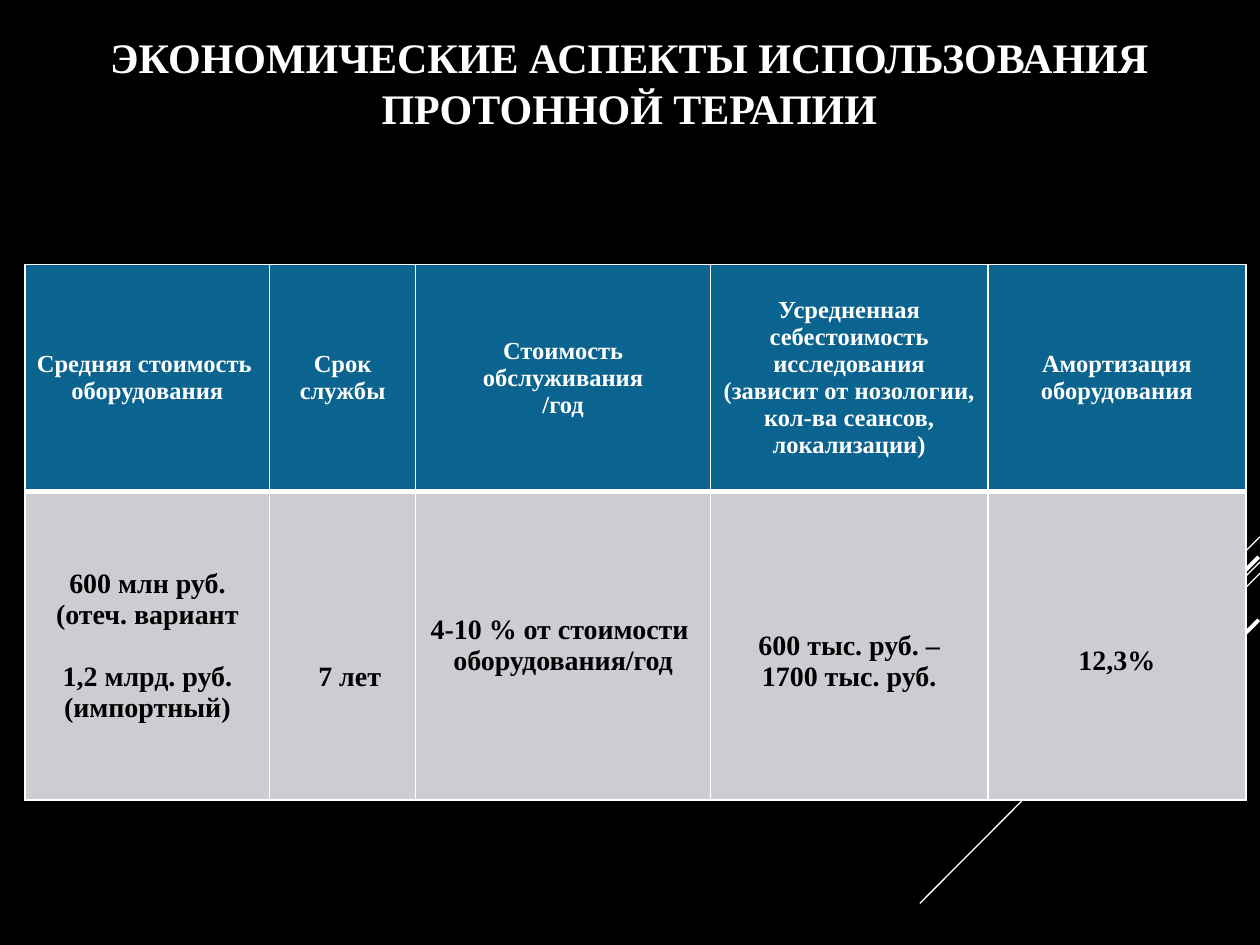
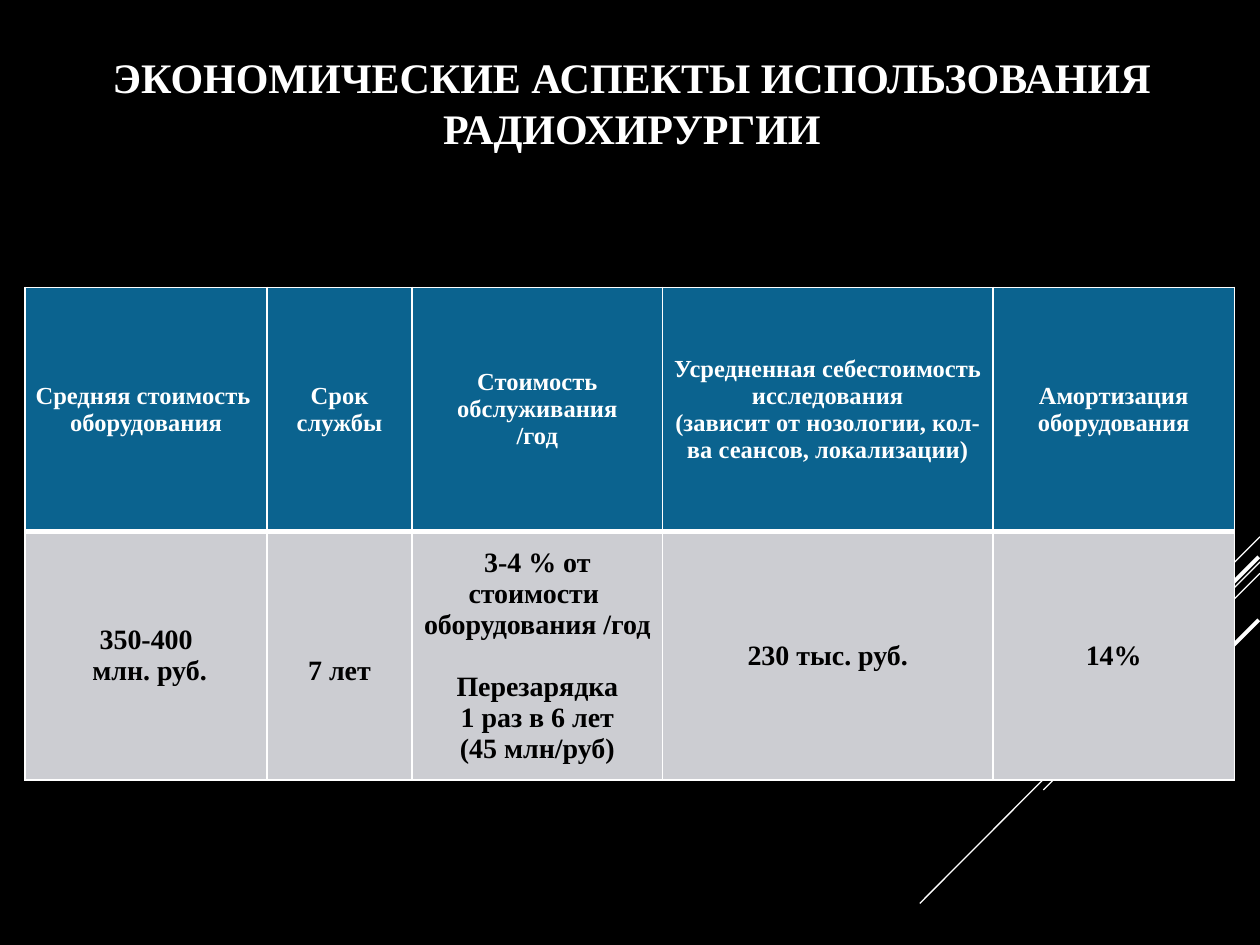
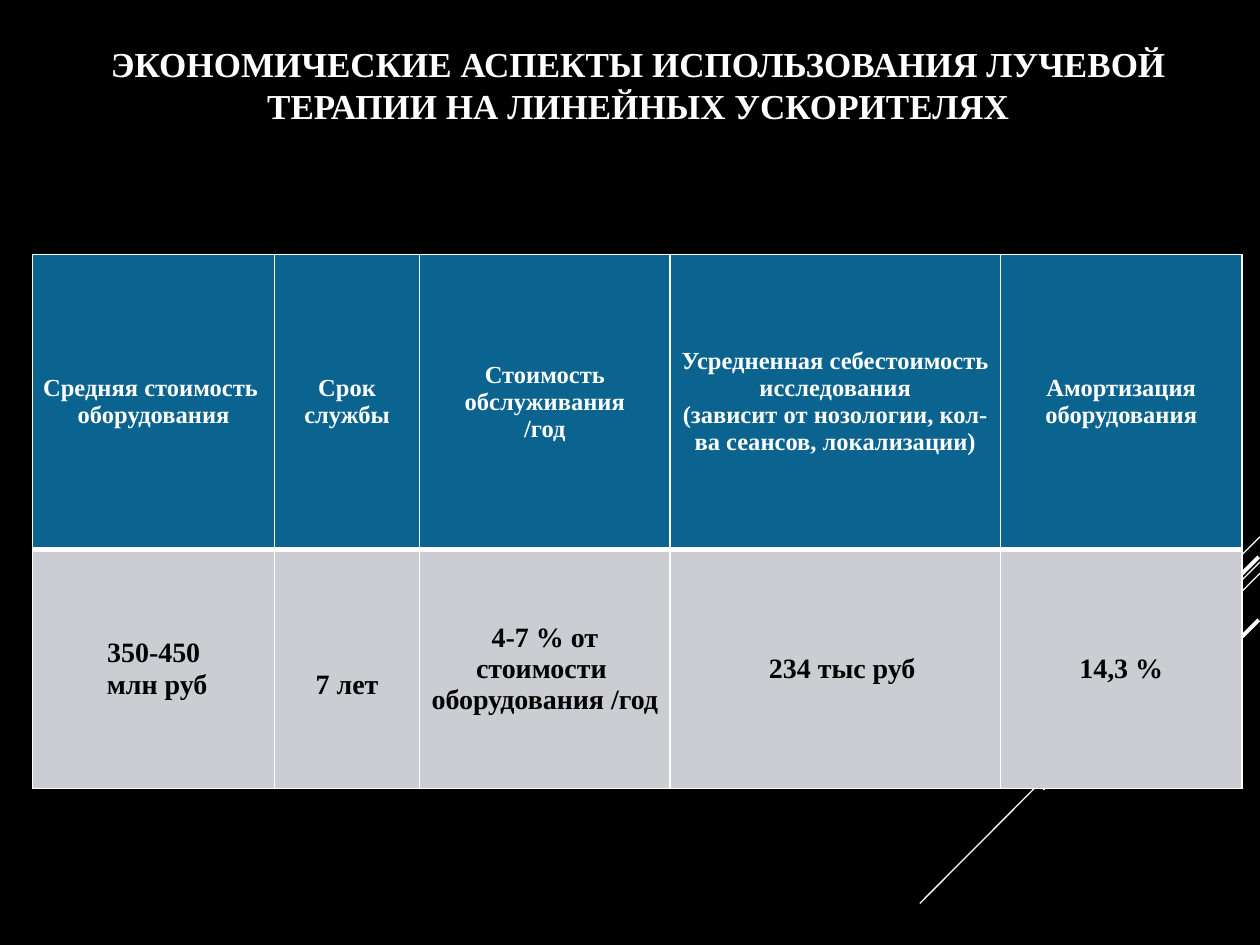
from lxml.etree import SubElement
from pptx import Presentation
from pptx.dml.color import RGBColor
from pptx.enum.shapes import MSO_CONNECTOR as CONN
from pptx.enum.text import MSO_ANCHOR as ANCHOR, PP_ALIGN as ALIGN
from pptx.oxml.ns import qn
from pptx.util import Inches, Pt

BLACK = RGBColor(0x00, 0x00, 0x00)
WHITE = RGBColor(0xFF, 0xFF, 0xFF)
BLUE = RGBColor(0x0B, 0x63, 0x8F)
GREY = RGBColor(0xCC, 0xCD, 0xD2)
FONT = "Times New Roman"
BLANK_LINE = 17.7
INDENT = 0.11

RAYS = [
    (10, 4.26, 9.17, 5.09, 0.75),
    (10, 4.46, 7.3, 7.17, 0.75),
    (10, 4.55, 8.28, 6.27, 0.75),
    (9.99, 4.42, 8.42, 5.99, 2.25),
    (9.99, 4.92, 8.85, 6.06, 2.25),
]
HEADERS = [
    ["Средняя стоимость ", "оборудования"],
    ["Срок службы"],
    ["Стоимость обслуживания", "/год"],
    ["Усредненная себестоимость исследования",
     "(зависит от нозологии, кол-ва сеансов, локализации)"],
    ["Амортизация оборудования"],
]
COMMON_COLS = [1.92, 1.15, 1.99, 2.62, 1.92]

SLIDES = [
    dict(
        title=["ЭКОНОМИЧЕСКИЕ АСПЕКТЫ ИСПОЛЬЗОВАНИЯ ПРОТОННОЙ ТЕРАПИИ"],
        title_box=(0.15, 0.2, 9.69, 0.91), size=24,
        table_at=(0.2, 2.1), cols=[1.94, 1.16, 2.34, 2.2, 2.05], rows=[1.8, 2.45],
        values=[
            dict(lines=["600 млн руб.", "(отеч. вариант", "1,2 млрд. руб.", "(импортный)"],
                 gap_before=2),
            dict(lines=["7 лет"], drop=0.49, indent=INDENT),
            dict(lines=["4-10 % от стоимости ", "оборудования/год"]),
            dict(lines=["600 тыс. руб. –", "1700 тыс. руб."], drop=0.25),
            dict(lines=["12,3%"], drop=0.25),
        ],
    ),
    dict(
        title=["ЭКОНОМИЧЕСКИЕ АСПЕКТЫ ИСПОЛЬЗОВАНИЯ", "РАДИОХИРУРГИИ"],
        title_box=(0.21, 0.36, 9.61, 0.91), size=24,
        table_at=(0.2, 2.28), cols=COMMON_COLS, rows=[1.94, 1.97],
        values=[
            dict(lines=["350-400", " млн. руб."]),
            dict(lines=["7 лет"], drop=0.25),
            dict(lines=["3-4 % от стоимости ", "оборудования /год", "Перезарядка",
                        "1 раз в 6 лет", "(45 млн/руб)"], gap_before=2),
            dict(lines=["230 тыс. руб."]),
            dict(lines=["14%"]),
        ],
    ),
    dict(
        title=["ЭКОНОМИЧЕСКИЕ АСПЕКТЫ ИСПОЛЬЗОВАНИЯ ЛУЧЕВОЙ ТЕРАПИИ НА ЛИНЕЙНЫХ УСКОРИТЕЛЯХ"],
        title_box=(0.22, 0.29, 9.69, 0.77), size=20,
        table_at=(0.26, 2.02), cols=COMMON_COLS, rows=[2.34, 1.9],
        values=[
            dict(lines=["350-450", " млн руб"]),
            dict(lines=["7 лет"], drop=0.25),
            dict(lines=["4-7 % от стоимости ", "оборудования /год"]),
            dict(lines=["234 тыс руб"], indent=INDENT),
            dict(lines=["14,3 %"]),
        ],
    ),
]


def write(tf, lines, size, color, gap_before=None, line_height=None):
    """Fill a text frame with centred bold paragraphs."""
    tf.word_wrap = True
    for i, line in enumerate(lines):
        p = tf.paragraphs[0] if i == 0 else tf.add_paragraph()
        p.alignment = ALIGN.CENTER
        if i == gap_before:
            p.space_before = Pt(BLANK_LINE)
        if line_height:
            p.line_spacing = Pt(line_height)
        r = p.add_run()
        r.text = line
        r.font.name, r.font.size, r.font.bold = FONT, Pt(size), True
        r.font.color.rgb = color


def add_rays(s):
    """Draw the group of diagonal lines in the lower right corner."""
    group = s.shapes.add_group_shape()
    for x1, y1, x2, y2, width in RAYS:
        ray = group.shapes.add_connector(
            CONN.STRAIGHT, Inches(x1), Inches(y1), Inches(x2), Inches(y2))
        ray.line.color.rgb = WHITE
        ray.line.width = Pt(width)
        SubElement(ray._element.spPr, qn("a:effectLst"))


def add_title(s, lines, box, size):
    """Place the slide title in its box."""
    tb = s.shapes.add_textbox(*map(Inches, box))
    write(tb.text_frame, lines, size, WHITE, line_height=round(size * 1.21))


def add_border(cell, side, width):
    """Give one side of a cell a white line."""
    ln = SubElement(cell._tc.get_or_add_tcPr(), qn(f"a:ln{side}"), w=str(Pt(width)))
    SubElement(SubElement(ln, qn("a:solidFill")), qn("a:srgbClr"), val=str(WHITE))


def style_cell(cell, fill, thick_side, drop=0, indent=0):
    """Set the borders, fill, margins and anchor of a cell."""
    for side in "LRTB":
        add_border(cell, side, 3 if side == thick_side else 1)
    cell.fill.solid()
    cell.fill.fore_color.rgb = fill
    cell.vertical_anchor = ANCHOR.MIDDLE
    cell.margin_left, cell.margin_right = Inches(0.07 + indent), Inches(0.07)
    cell.margin_top, cell.margin_bottom = Inches(0.05 + drop), Inches(0.05)


def add_cost_table(s, at, cols, rows, values):
    """Add the table with a header row and a row of values."""
    box = (*at, sum(cols), sum(rows))
    table = s.shapes.add_table(2, len(cols), *map(Inches, box)).table
    table.horz_banding = False
    for row, height in zip(table.rows, rows):
        row.height = Inches(height)
    for i, (width, header, value) in enumerate(zip(cols, HEADERS, values)):
        table.columns[i].width = Inches(width)
        head, body = table.cell(0, i), table.cell(1, i)
        style_cell(head, BLUE, "B")
        write(head.text_frame, header, 14, WHITE)
        style_cell(body, GREY, "T", value.get("drop", 0), value.get("indent", 0))
        write(body.text_frame, value["lines"], 16, BLACK, value.get("gap_before"))


def add_cost_slide(prs, title, title_box, size, table_at, cols, rows, values):
    """Build one slide about the costs of a treatment."""
    s = prs.slides.add_slide(prs.slide_layouts[6])
    s.background.fill.solid()
    s.background.fill.fore_color.rgb = BLACK
    add_rays(s)
    add_title(s, title, title_box, size)
    add_cost_table(s, table_at, cols, rows, values)


def main():
    """Build the presentation."""
    prs = Presentation()
    prs.slide_width, prs.slide_height = Inches(10), Inches(7.5)
    for content in SLIDES:
        add_cost_slide(prs, **content)
    prs.save("out.pptx")


if __name__ == "__main__":
    main()
